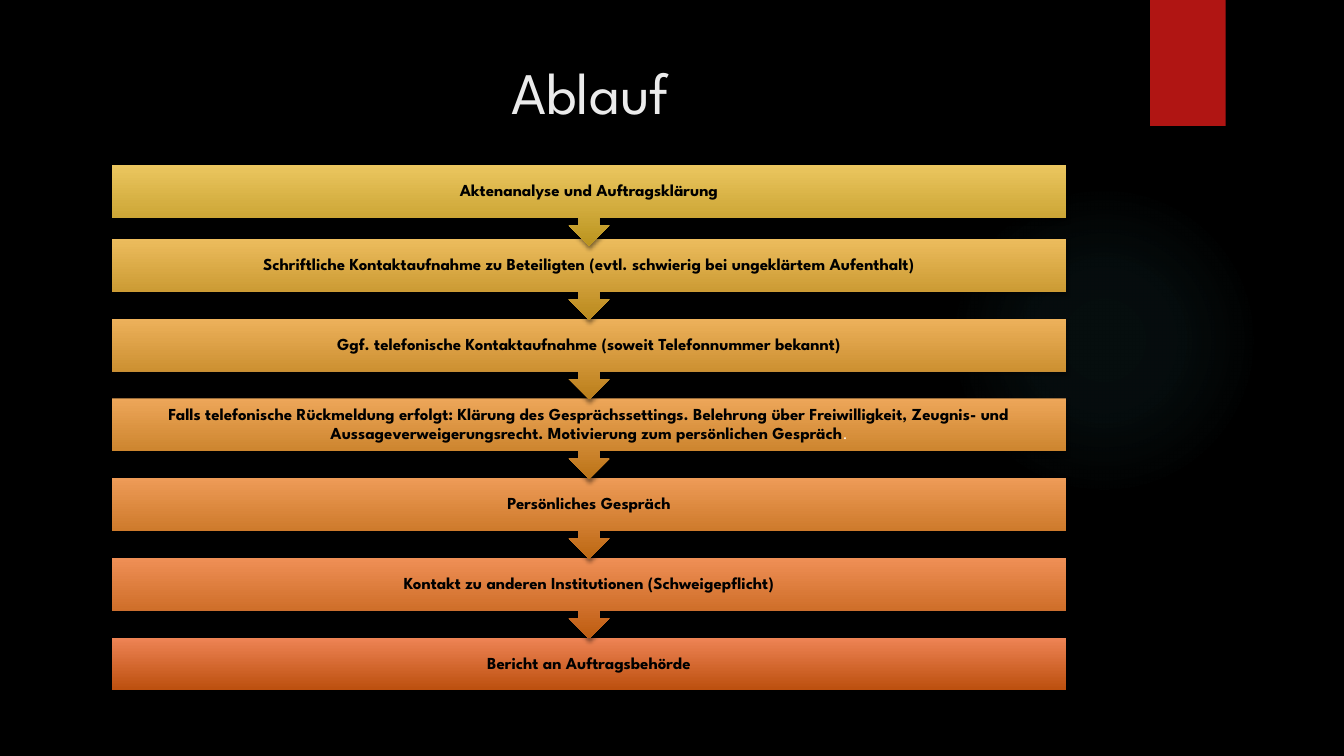
"""Build the "Ablauf" slide: seven process steps linked by arrow callouts."""
from pptx import Presentation
from pptx.dml.color import RGBColor
from pptx.enum.shapes import MSO_SHAPE
from pptx.enum.text import MSO_ANCHOR, PP_ALIGN
from pptx.oxml import parse_xml
from pptx.oxml.ns import nsdecls, qn
from pptx.util import Pt

RECTANGLE = MSO_SHAPE.RECTANGLE
ELLIPSE = MSO_SHAPE.OVAL
CALLOUT = MSO_SHAPE.DOWN_ARROW_CALLOUT
CENTER = PP_ALIGN.CENTER
TOP = MSO_ANCHOR.TOP
MIDDLE = MSO_ANCHOR.MIDDLE

COLORS = {
    "background": "000000",
    "glow": "50B9C1",
    "ribbon": "B01513",
    "title": "EBEBEB",
    "step": "000000",
    "period": "FFFFFF",
    "shadow": "000000",
}
FORMATS = {
    "title": {"size": Pt(42), "bold": False},
    "step": {"size": Pt(12), "bold": True},
    "period": {"size": Pt(11), "bold": False},
}
GLOW_STOPS = [(0, 7), (36, 6), (69, 0)]

STEPS = [
    ("Aktenanalyse und Auftragsklärung", "EBC65F", "BB941F"),
    ("Schriftliche Kontaktaufnahme zu Beteiligten (evtl. schwierig bei "
     "ungeklärtem Aufenthalt)", "ECBC5D", "BA891D"),
    ("Ggf. telefonische Kontaktaufnahme (soweit Telefonnummer bekannt)",
     "EDB15B", "BA7E1A"),
    ("Falls telefonische Rückmeldung erfolgt: Klärung des Gesprächssettings. "
     "Belehrung über Freiwilligkeit, Zeugnis- und Aussageverweigerungsrecht. "
     "Motivierung zum persönlichen Gespräch", "EDA659", "BB7317"),
    ("Persönliches Gespräch", "EE9B57", "BC6813"),
    ("Kontakt zu anderen Institutionen (Schweigepflicht)", "EF8F56", "BD5C10"),
    ("Bericht an Auftragsbehörde", "EE8455", "BC4F0E"),
]
PERIOD_STEP = 3
FIRST_TOP, SECOND_TOP, STEP_PITCH = 118, 170.7, 56.95
STEP_LEFT, STEP_WIDTH = 79.9, 681.8
BAR_HEIGHT, CALLOUT_HEIGHT = 37.5, 57.6


class SlideBuilder:
    """Hold the slide and its style, and add each kind of element."""

    def __init__(self, slide, font_name):
        self.slide = slide
        self.font_name = font_name
        fill = slide.background.fill
        fill.solid()
        fill.fore_color.rgb = RGBColor.from_string(COLORS["background"])

    def add_shape(self, kind, left, top, width, height):
        shape = self.slide.shapes.add_shape(
            kind, Pt(left), Pt(top), Pt(width), Pt(height))
        shape.line.fill.background()
        shape.shadow.inherit = False
        return shape

    def add_shadow(self, shape):
        effects = shape._element.spPr.find(qn("a:effectLst"))
        effects.append(parse_xml(
            f'<a:outerShdw {nsdecls("a")} blurRad="{Pt(3)}" dist="{Pt(2)}" '
            f'dir="5400000" rotWithShape="0"><a:srgbClr val="{COLORS["shadow"]}">'
            '<a:alpha val="45000"/></a:srgbClr></a:outerShdw>'))

    def add_glow(self, left, top, size):
        shape = self.add_shape(ELLIPSE, left, top, size, size)
        shape.fill.gradient()
        stops = "".join(
            f'<a:gs pos="{position * 1000}"><a:srgbClr val="{COLORS["glow"]}">'
            f'<a:alpha val="{alpha * 1000}"/></a:srgbClr></a:gs>'
            for position, alpha in GLOW_STOPS)
        properties = shape._element.spPr
        properties.replace(properties.find(qn("a:gradFill")), parse_xml(
            f'<a:gradFill {nsdecls("a")}><a:gsLst>{stops}</a:gsLst>'
            '<a:path path="circle"><a:fillToRect l="50000" t="50000" '
            'r="50000" b="50000"/></a:path></a:gradFill>'))

    def add_ribbon(self, left, top, width, height):
        shape = self.add_shape(RECTANGLE, left, top, width, height)
        shape.fill.solid()
        shape.fill.fore_color.rgb = RGBColor.from_string(COLORS["ribbon"])
        self.add_shadow(shape)

    def add_run(self, paragraph, text, role):
        run = paragraph.add_run()
        run.text = text
        run.font.name = self.font_name
        run.font.color.rgb = RGBColor.from_string(COLORS[role])
        for name, value in FORMATS[role].items():
            setattr(run.font, name, value)

    def add_text(self, shape, text, role, anchor):
        frame = shape.text_frame
        frame.word_wrap = True
        frame.vertical_anchor = anchor
        paragraph = frame.paragraphs[0]
        paragraph.alignment = CENTER
        self.add_run(paragraph, text, role)
        return paragraph

    def add_title(self, text, left, top, width, height):
        box = self.slide.shapes.add_textbox(
            Pt(left), Pt(top), Pt(width), Pt(height))
        self.add_text(box, text, "title", TOP)

    def add_step(self, text, top, colors, is_last):
        kind, height = ((RECTANGLE, BAR_HEIGHT) if is_last
                        else (CALLOUT, CALLOUT_HEIGHT))
        shape = self.add_shape(kind, STEP_LEFT, top, STEP_WIDTH, height)
        shape.fill.gradient()
        shape.fill.gradient_angle = 270
        for stop, color in zip(shape.fill.gradient_stops, colors):
            stop.color.rgb = RGBColor.from_string(color)
        self.add_shadow(shape)
        for side in ("left", "top", "right", "bottom"):
            setattr(shape.text_frame, f"margin_{side}", Pt(6.5))
        paragraph = self.add_text(shape, text, "step", MIDDLE)
        paragraph.line_spacing = 0.9
        return paragraph


def main():
    presentation = Presentation()
    presentation.slide_width = Pt(960)
    presentation.slide_height = Pt(540)
    slide = presentation.slides.add_slide(presentation.slide_layouts[6])
    builder = SlideBuilder(slide, "League Spartan")

    builder.add_glow(677.5, 131.8, 221.8)
    builder.add_ribbon(821.5, 0, 54, 90)
    builder.add_title("Ablauf", 51, 36, 741, 110)

    last = len(STEPS) - 1
    for index in range(last, -1, -1):
        text, light, dark = STEPS[index]
        top = SECOND_TOP + (index - 1) * STEP_PITCH if index else FIRST_TOP
        paragraph = builder.add_step(text, top, (light, dark), index == last)
        if index == PERIOD_STEP:
            builder.add_run(paragraph, ".", "period")

    presentation.save("out.pptx")


if __name__ == "__main__":
    main()
